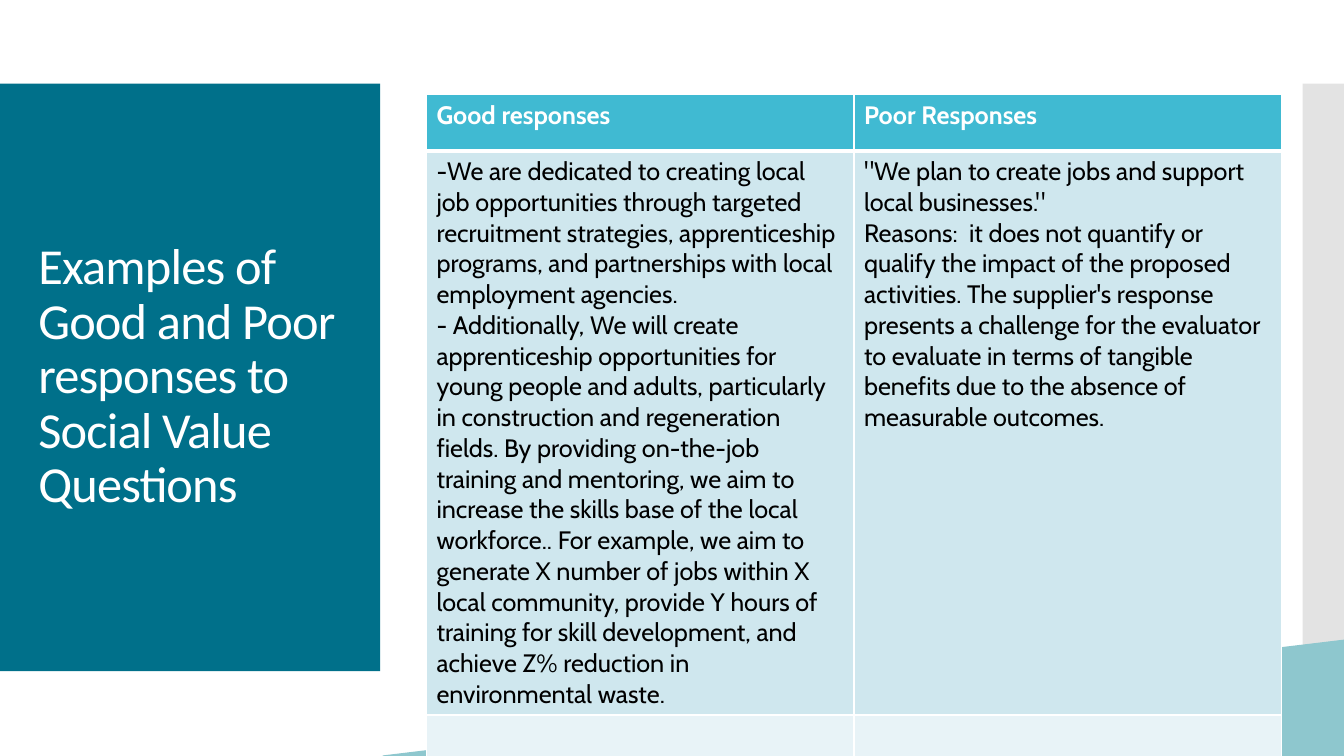
from lxml.etree import SubElement
from pptx import Presentation
from pptx.dml.color import RGBColor
from pptx.enum.shapes import MSO_SHAPE
from pptx.enum.text import MSO_ANCHOR, MSO_AUTO_SIZE, PP_ALIGN
from pptx.oxml.ns import qn
from pptx.util import Inches, Pt

WHITE = RGBColor(0xFF, 0xFF, 0xFF)
BLACK = RGBColor(0, 0, 0)
TEAL = RGBColor(0x00, 0x70, 0x8A)
GREY = RGBColor(0xC8, 0xC8, 0xC8)
AQUA = RGBColor(0x8E, 0xC7, 0xCE)
HEAD = RGBColor(0x40, 0xBA, 0xD2)
BAND = RGBColor(0xCF, 0xE7, 0xEE)
PALE = RGBColor(0xE8, 0xF3, 0xF7)

TITLE = "Examples of Good and Poor responses to Social Value Questions"
GOOD = [
    "-We are dedicated to creating local job opportunities through targeted "
    "recruitment strategies, apprenticeship programs, and partnerships with "
    "local employment agencies.",
    "- Additionally, We will create apprenticeship opportunities for young "
    "people and adults, particularly in construction and regeneration fields. "
    "By providing on-the-job training and mentoring, we aim to increase the "
    "skills base of the local workforce.. For example, we aim to generate X "
    "number of jobs within X local community, provide Y hours of training for "
    "skill development, and achieve Z% reduction in environmental waste.",
]
POOR = [
    '"We plan to create jobs and support local businesses."',
    "Reasons:  it does not quantify or qualify the impact of the proposed "
    "activities. The supplier's response presents a challenge for the "
    "evaluator to evaluate in terms of tangible benefits due to the absence "
    "of measurable outcomes.",
]
# height, fill, text colour, bold, top border, bottom border, cells
ROWS = [
    (0.56, HEAD, WHITE, True, 1, 3, (["Good responses"], ["Poor Responses"])),
    (4.34, BAND, BLACK, False, 3, 1, (GOOD, POOR)),
    (0.94, PALE, BLACK, False, 1, 1, ([], [])),
]
COL = 4.24


def write(frame, lines, font="Cabin", size=18, color=BLACK, bold=False,
          space=None):
    for i, line in enumerate(lines):
        para = frame.add_paragraph() if i else frame.paragraphs[0]
        para.alignment = PP_ALIGN.LEFT
        para.line_spacing = space
        run = para.add_run()
        run.text = line
        run.font.name = font
        run.font.size = Pt(size)
        run.font.bold = bold
        run.font.color.rgb = color


def panel(slide, kind, box, color):
    shape = slide.shapes.add_shape(kind, *map(Inches, box))
    shape.shadow.inherit = False
    shape.fill.solid()
    shape.fill.fore_color.rgb = color
    shape.line.fill.background()
    return shape


def edge(cell, side, width):
    props = cell._tc.get_or_add_tcPr()
    line = SubElement(props, qn("a:ln" + side), w=str(Pt(width)))
    fill = SubElement(line, qn("a:solidFill"))
    SubElement(fill, qn("a:srgbClr"), val=str(WHITE))


def backdrop(slide):
    panel(slide, MSO_SHAPE.RECTANGLE, (0, 0.83, 3.77, 5.83), TEAL)
    strip = panel(slide, MSO_SHAPE.RECTANGLE, (12.92, 0.83, 0.42, 5.83), GREY)
    tint = next(strip.element.iter(qn("a:srgbClr")))
    SubElement(tint, qn("a:alpha"), val="50000")
    wedge = panel(slide, MSO_SHAPE.ISOSCELES_TRIANGLE,
                  (3.8, 6.35, 9.54, 1.15), AQUA)
    wedge.adjustments[0] = 1
    wedge.line.color.rgb = AQUA
    wedge.line.width = Pt(0.85)


def heading(slide):
    title = slide.shapes.title
    title.left, title.top = Inches(0.28), Inches(1.23)
    title.width, title.height = Inches(3.22), Inches(5.03)
    frame = title.text_frame
    frame.word_wrap = True
    frame.auto_size = MSO_AUTO_SIZE.NONE
    frame.vertical_anchor = MSO_ANCHOR.MIDDLE
    write(frame, [TITLE], font="Calibri", size=36, color=WHITE, space=0.9)
    for props in title.element.iter(qn("a:rPr")):
        props.set("spc", "-60")
    # Bring the title in front of the teal panel
    title.element.getparent().append(title.element)


def answers(slide):
    high = sum(row[0] for row in ROWS)
    table = slide.shapes.add_table(
        len(ROWS), 2, Inches(4.23), Inches(0.94),
        Inches(2 * COL), Inches(high)).table
    for col in table.columns:
        col.width = Inches(COL)
    for r, (tall, fill, color, bold, top, base, cells) in enumerate(ROWS):
        table.rows[r].height = Inches(tall)
        for c, lines in enumerate(cells):
            cell = table.cell(r, c)
            for side, width in (("L", 1), ("R", 1), ("T", top), ("B", base)):
                edge(cell, side, width)
            cell.fill.solid()
            cell.fill.fore_color.rgb = fill
            write(cell.text_frame, lines, color=color, bold=bold)


def main():
    deck = Presentation()
    deck.slide_width, deck.slide_height = Inches(13.33), Inches(7.5)
    slide = deck.slides.add_slide(deck.slide_layouts[5])
    backdrop(slide)
    heading(slide)
    answers(slide)
    deck.save("out.pptx")


if __name__ == "__main__":
    main()
